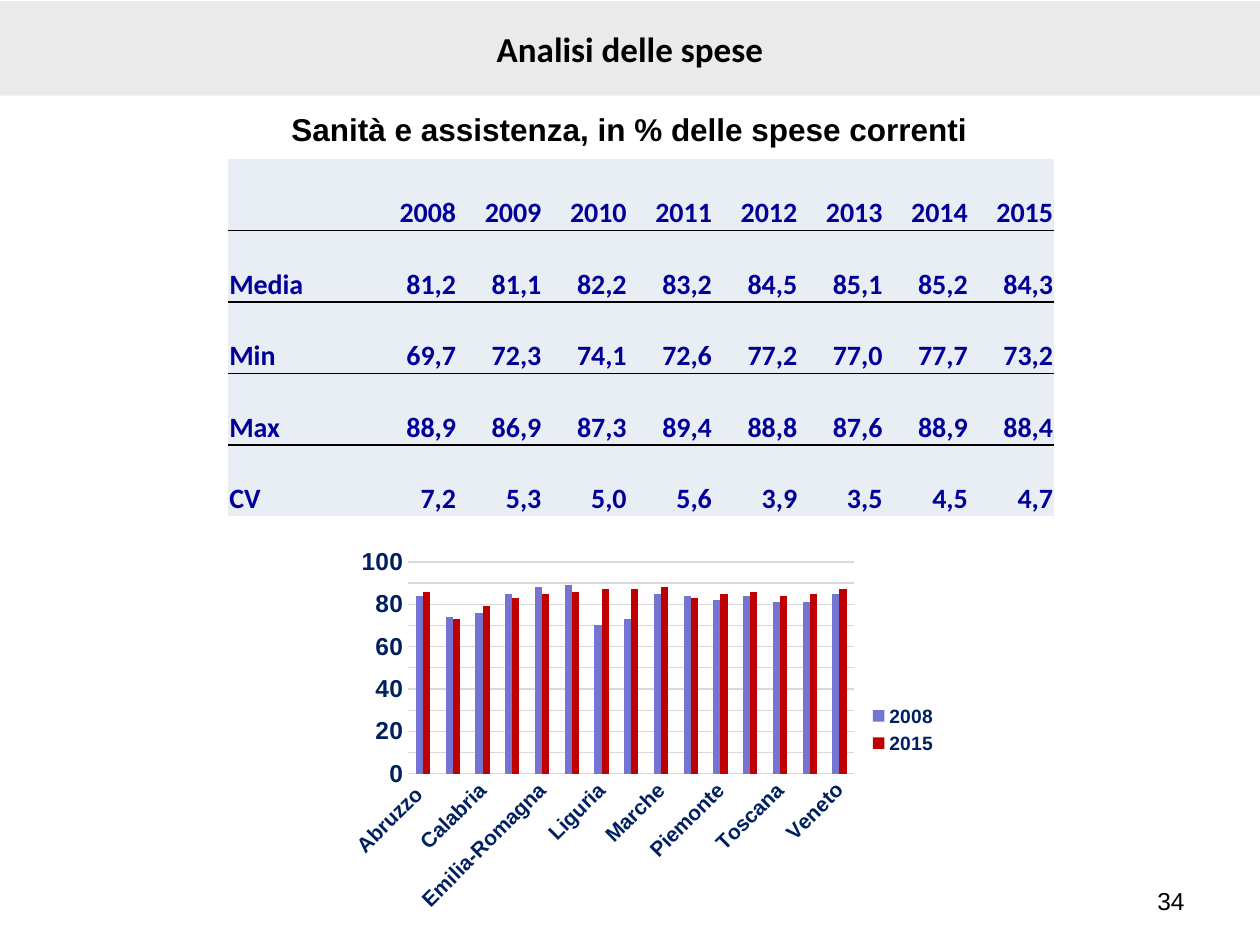
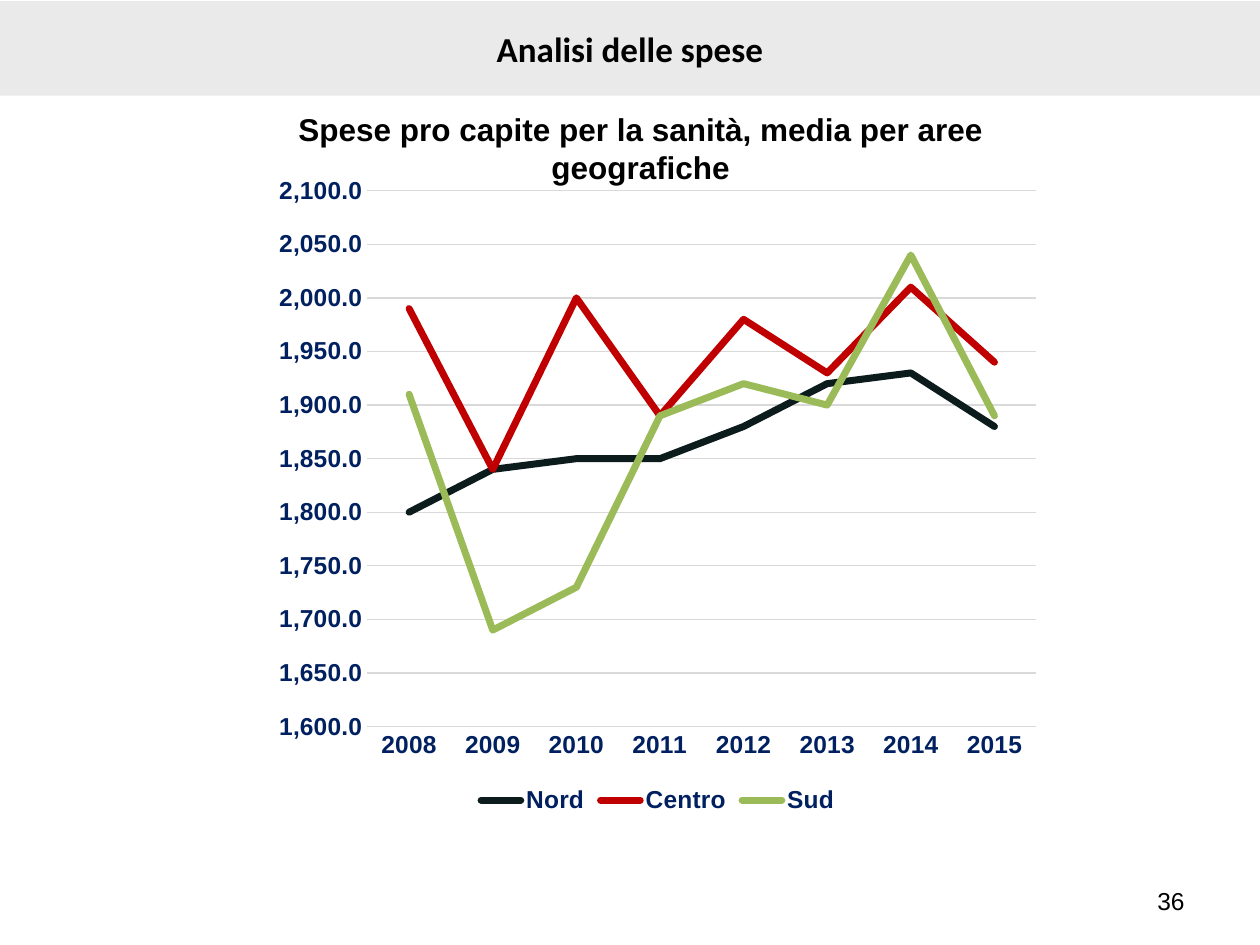
from dataclasses import dataclass

from lxml.etree import SubElement
from pptx import Presentation
from pptx.chart.data import CategoryChartData
from pptx.dml.color import RGBColor
from pptx.enum.chart import XL_CHART_TYPE, XL_LEGEND_POSITION, XL_TICK_MARK
from pptx.enum.shapes import MSO_SHAPE
from pptx.enum.text import MSO_ANCHOR, PP_ALIGN
from pptx.oxml.ns import qn
from pptx.util import Inches, Pt

SLIDE_WIDTH, SLIDE_HEIGHT = Inches(10), Inches(7.5)
COLUMNS, ROWS = 100, 75
BLACK, BAND_GREY, GRID_GREY = "000000", "EAEAEA", "D9D9D9"
TABLE_FILL, TABLE_BLUE, CHART_BLUE = "E9EDF4", "000099", "002060"
RED = "C00000"
NO_TABLE_STYLE = "{2D5ABB26-0587-4C30-8999-92F81FD0307C}"
YEARS = [str(year) for year in range(2008, 2016)]


@dataclass(frozen=True)
class Box:
    column: float
    row: float
    columns: float
    rows: float

    def lengths(self) -> tuple[int, int, int, int]:
        return (
            int(SLIDE_WIDTH * self.column / COLUMNS),
            int(SLIDE_HEIGHT * self.row / ROWS),
            int(SLIDE_WIDTH * self.columns / COLUMNS),
            int(SLIDE_HEIGHT * self.rows / ROWS),
        )


@dataclass(frozen=True)
class TextStyle:
    size: float
    color: str = BLACK
    name: str = "Arial"
    bold: bool = True


@dataclass(frozen=True)
class Series:
    name: str
    color: str
    values: tuple[float, ...]


@dataclass(frozen=True)
class ChartPanel:
    kind: XL_CHART_TYPE
    box: Box
    categories: list[str]
    series: list[Series]
    minimum: float
    maximum: float
    unit: float
    number_format: str
    category_size: float
    legend_size: float
    legend_position: XL_LEGEND_POSITION


BAND = Box(0, 0.1, 100, 7.5)
PAGE_NUMBER = Box(71.7, 69.5, 23.3, 4)
TITLE_STYLE = TextStyle(20, name="Calibri")
SUBTITLE_STYLE = TextStyle(18)
PAGE_STYLE = TextStyle(14, bold=False)
CELL_STYLE = TextStyle(16, TABLE_BLUE, "Calibri")
AXIS_SIZE = 14

TABLE_BOX = Box(18.1, 12.6, 65.6, 28.4)
TABLE_COLUMNS = [9.3, 8.9] + [6.77] * 7
TABLE_ROWS = [
    ["", *YEARS],
    ["Media", "81,2", "81,1", "82,2", "83,2", "84,5", "85,1", "85,2", "84,3"],
    ["Min", "69,7", "72,3", "74,1", "72,6", "77,2", "77,0", "77,7", "73,2"],
    ["Max", "88,9", "86,9", "87,3", "89,4", "88,8", "87,6", "88,9", "88,4"],
    ["CV", "7,2", "5,3", "5,0", "5,6", "3,9", "3,5", "4,5", "4,7"],
]

REGION_CHART = ChartPanel(
    kind=XL_CHART_TYPE.COLUMN_CLUSTERED,
    box=Box(27, 42.9, 48.4, 30),
    categories=[
        "Abruzzo ", "Basilicata", "Calabria", "Campania", "Emilia-Romagna",
        "Lazio", "Liguria", "Lombardia", "Marche", "Molise", "Piemonte",
        "Puglia", "Toscana", "Umbria", "Veneto",
    ],
    series=[
        Series("2008", "7575D1", (84, 74, 76, 85, 88, 89, 70, 73, 85, 84, 82, 84, 81, 81, 85)),
        Series("2015", RED, (86, 73, 79, 83, 85, 86, 87, 87, 88, 83, 85, 86, 84, 85, 87)),
    ],
    minimum=0, maximum=100, unit=10, number_format="#,##0",
    category_size=12, legend_size=11, legend_position=XL_LEGEND_POSITION.RIGHT,
)
AREA_CHART = ChartPanel(
    kind=XL_CHART_TYPE.LINE,
    box=Box(20.9, 13, 62.6, 52),
    categories=YEARS,
    series=[
        Series("Nord", "0C1C1D", (1800, 1840, 1850, 1850, 1880, 1920, 1930, 1880)),
        Series("Centro", RED, (1990, 1840, 2000, 1890, 1980, 1930, 2010, 1940)),
        Series("Sud", "9BBB59", (1910, 1690, 1730, 1890, 1920, 1900, 2040, 1890)),
    ],
    minimum=1600, maximum=2100, unit=50, number_format="#,##0.0",
    category_size=14, legend_size=14, legend_position=XL_LEGEND_POSITION.BOTTOM,
)


def rgb(color: str) -> RGBColor:
    return RGBColor.from_string(color)


def set_font(font, style: TextStyle) -> None:
    font.size, font.name, font.bold = Pt(style.size), style.name, style.bold
    font.color.rgb = rgb(style.color)


def write(frame, text: str, style: TextStyle, alignment: PP_ALIGN) -> None:
    paragraph = frame.paragraphs[0]
    paragraph.alignment = alignment
    run = paragraph.add_run()
    run.text = text
    set_font(run.font, style)


def add_text(slide, box: Box, text: str, style: TextStyle, alignment: PP_ALIGN,
             anchor: MSO_ANCHOR = MSO_ANCHOR.TOP) -> None:
    frame = slide.shapes.add_textbox(*box.lengths()).text_frame
    frame.word_wrap = True
    frame.vertical_anchor = anchor
    write(frame, text, style, alignment)


def add_band(slide, title: str) -> None:
    shape = slide.shapes.add_shape(MSO_SHAPE.RECTANGLE, *BAND.lengths())
    shape.shadow.inherit = False
    shape.fill.solid()
    shape.fill.fore_color.rgb = rgb(BAND_GREY)
    shape.line.fill.background()
    shape.text_frame.vertical_anchor = MSO_ANCHOR.MIDDLE
    write(shape.text_frame, title, TITLE_STYLE, PP_ALIGN.CENTER)


def add_border(cell, side: str) -> None:
    line = SubElement(cell._tc.get_or_add_tcPr(), qn(f"a:{side}"), w=str(Pt(1)))
    fill = SubElement(line, qn("a:solidFill"))
    SubElement(fill, qn("a:srgbClr"), val=BLACK)


def add_spending_table(slide) -> None:
    shape = slide.shapes.add_table(len(TABLE_ROWS), len(TABLE_COLUMNS), *TABLE_BOX.lengths())
    table = shape.table
    table.first_row = table.horz_banding = False
    table._tbl.tblPr.find(qn("a:tableStyleId")).text = NO_TABLE_STYLE
    for column, width in zip(table.columns, TABLE_COLUMNS):
        column.width = int(SLIDE_WIDTH * width / COLUMNS)
    last_row = len(TABLE_ROWS) - 1
    for row_index, values in enumerate(TABLE_ROWS):
        for column_index, value in enumerate(values):
            cell = table.cell(row_index, column_index)
            cell.margin_left = cell.margin_right = cell.margin_top = Inches(0.01)
            cell.margin_bottom = 0
            cell.vertical_anchor = MSO_ANCHOR.BOTTOM
            if row_index > 0:
                add_border(cell, "lnT")
            if row_index < last_row:
                add_border(cell, "lnB")
            cell.fill.solid()
            cell.fill.fore_color.rgb = rgb(TABLE_FILL)
            if value:
                write(cell.text_frame, value, CELL_STYLE,
                      PP_ALIGN.RIGHT if column_index else PP_ALIGN.LEFT)


def style_axis(axis, size: float) -> None:
    axis.major_tick_mark = axis.minor_tick_mark = XL_TICK_MARK.NONE
    set_font(axis.tick_labels.font, TextStyle(size, CHART_BLUE))


def style_line(line, color: str, width: float) -> None:
    line.color.rgb = rgb(color)
    line.width = Pt(width)


def add_chart_panel(slide, panel: ChartPanel):
    data = CategoryChartData()
    data.categories = panel.categories
    for series in panel.series:
        data.add_series(series.name, series.values)
    chart = slide.shapes.add_chart(panel.kind, *panel.box.lengths(), data).chart
    set_font(chart.font, TextStyle(10, name="Calibri", bold=False))
    chart.has_title = False
    chart.has_legend = True
    chart.legend.position = panel.legend_position
    chart.legend.include_in_layout = False
    set_font(chart.legend.font, TextStyle(panel.legend_size, CHART_BLUE))
    style_axis(chart.category_axis, panel.category_size)
    style_line(chart.category_axis.format.line, GRID_GREY, 0.75)
    value_axis = chart.value_axis
    style_axis(value_axis, AXIS_SIZE)
    value_axis.format.line.fill.background()
    style_line(value_axis.major_gridlines.format.line, GRID_GREY, 0.75)
    value_axis.minimum_scale, value_axis.maximum_scale = panel.minimum, panel.maximum
    value_axis.major_unit = panel.unit
    value_axis.tick_labels.number_format = panel.number_format
    value_axis.tick_labels.number_format_is_linked = False
    chart.plots[0].vary_by_categories = False
    return chart


def add_region_chart(slide) -> None:
    chart = add_chart_panel(slide, REGION_CHART)
    plot = chart.plots[0]
    plot.gap_width, plot.overlap = 219, 0
    for drawn, series in zip(plot.series, REGION_CHART.series):
        drawn.format.fill.solid()
        drawn.format.fill.fore_color.rgb = rgb(series.color)
    chart.element.xpath(".//c:catAx/c:txPr/a:bodyPr")[0].set("rot", "-2700000")


def add_area_chart(slide) -> None:
    chart = add_chart_panel(slide, AREA_CHART)
    for drawn, series in zip(chart.plots[0].series, AREA_CHART.series):
        drawn.smooth = False
        style_line(drawn.format.line, series.color, 4)
        line = drawn.format.line._get_or_add_ln()
        line.set("cap", "rnd")
        SubElement(line, qn("a:round"))


def add_page(presentation, number: int, subtitle: str, subtitle_box: Box):
    slide = presentation.slides.add_slide(presentation.slide_layouts[6])
    add_band(slide, "Analisi delle spese")
    add_text(slide, subtitle_box, subtitle, SUBTITLE_STYLE, PP_ALIGN.CENTER)
    add_text(slide, PAGE_NUMBER, str(number), PAGE_STYLE, PP_ALIGN.RIGHT, MSO_ANCHOR.MIDDLE)
    return slide


def main() -> None:
    presentation = Presentation()
    presentation.slide_width, presentation.slide_height = SLIDE_WIDTH, SLIDE_HEIGHT
    share_slide = add_page(presentation, 34, "Sanità e assistenza, in % delle spese correnti",
                           Box(16.3, 8.25, 67.3, 4))
    add_spending_table(share_slide)
    add_region_chart(share_slide)
    area_slide = add_page(presentation, 36,
                          "Spese pro capite per la sanità, media per aree geografiche",
                          Box(15.7, 8.25, 70.3, 7.1))
    add_area_chart(area_slide)
    presentation.save("out.pptx")


if __name__ == "__main__":
    main()
